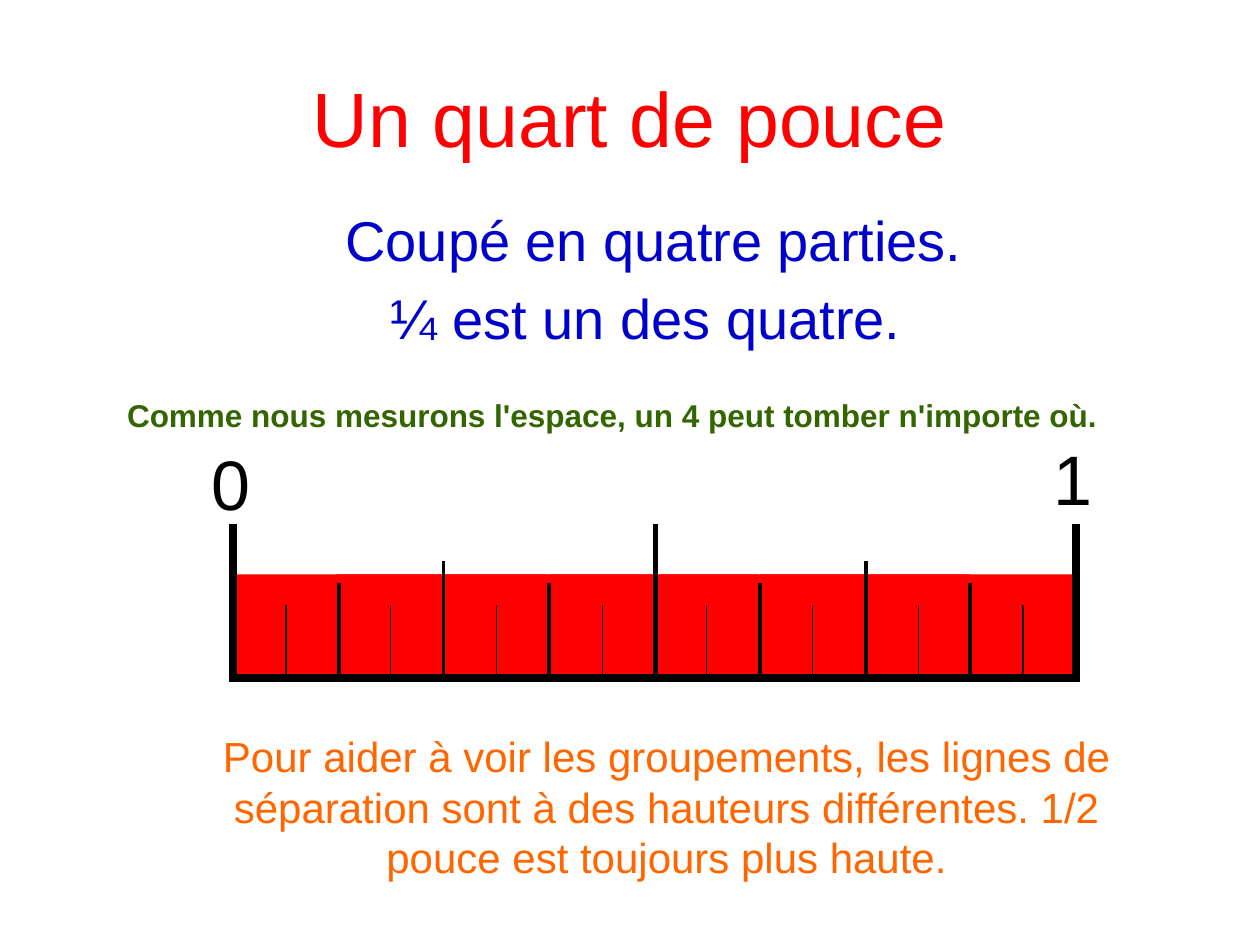
from lxml import etree
from pptx import Presentation, util as u
from pptx.dml.color import RGBColor
from pptx.enum import shapes, text
from pptx.oxml.ns import qn

PX = 9144  # 100 px to the inch
RED = RGBColor(0xFF, 0x00, 0x00)
BLUE = RGBColor(0x00, 0x00, 0xCC)
GREEN = RGBColor(0x33, 0x66, 0x00)
ORANGE = RGBColor(0xFF, 0x66, 0x00)
BLACK = RGBColor(0x00, 0x00, 0x00)
CENTER = text.PP_ALIGN.CENTER


def write(box, *lines, size, color, bold=False, align=None):
    """Fill a box or placeholder with one paragraph per line."""
    frame = box.text_frame
    frame.word_wrap = True
    for number, line in enumerate(lines):
        para = frame.add_paragraph() if number else frame.paragraphs[0]
        para.alignment = align
        span = para.add_run()
        span.text = line
        span.font.name = "Arial"
        span.font.size = u.Pt(size)
        span.font.bold = bold
        span.font.color.rgb = color


def draw_line(parent, x1, y1, x2, y2, width):
    line = parent.shapes.add_connector(
        shapes.MSO_CONNECTOR.STRAIGHT, x1 * PX, y1 * PX, x2 * PX, y2 * PX)
    line.line.color.rgb = BLACK
    line.line.width = u.Pt(width)
    etree.SubElement(line._element.spPr, qn("a:effectLst"))


deck = Presentation()
deck.slide_width, deck.slide_height = 1000 * PX, 750 * PX
page = deck.slides.add_slide(deck.slide_layouts[1])

# Title and the two centred lines
title, body = page.placeholders
for box, place in ((title, (50, 30, 900, 125)), (body, (50, 158, 950, 350))):
    box.left, box.top, box.width, box.height = [side * PX for side in place]
write(title, "Un quart de pouce", size=44, color=RED, align=CENTER)
write(body, "Coupé en quatre parties.", "¼ est un des quatre.",
      size=32, color=BLUE, align=CENTER)
for para, right in zip(body.text_frame.paragraphs, (12, 25)):
    properties = para._p.get_or_add_pPr()
    properties.set("marL", str(38 * PX))
    properties.set("marR", str(right * PX))
    properties.set("indent", str(-38 * PX))
    etree.SubElement(properties, qn("a:buNone"))

# Red band of the ruler, in overlapping quarters of an inch
for left in (603, 186, 523, 435, 267, 686, 353):
    quarter = page.shapes.add_shape(
        shapes.MSO_SHAPE.RECTANGLE, left * PX, 456 * PX, 167 * PX, 83 * PX)
    quarter.shadow.inherit = False
    quarter.fill.solid()
    quarter.fill.fore_color.rgb = RED
    quarter.line.fill.background()

# Ruler: the coarser the division, the taller and thicker its mark
START, END, BASE = 185, 854, 538
ruler = page.shapes.add_group_shape()
draw_line(ruler, START - 3, BASE, END + 3, BASE, 4.5)
marks = {16: (416, 4.5), 8: (416, 3), 4: (445, 2.25), 2: (463, 2.25), 1: (480, 0.75)}
for sixteenth in range(17):
    division = next(step for step in marks if sixteenth % step == 0)
    top, width = marks[division]
    x = round(START + (END - START) * sixteenth / 16)
    draw_line(ruler, x, top, x, BASE + 3 if division == 16 else BASE, width)

# Labels and remarks
for parent, label, place, style in (
    (ruler, "0", (158, 345, 100, 77), dict(size=40, color=BLACK)),
    (ruler, "1", (826, 341, 83, 77), dict(size=40, color=BLACK)),
    (page, "Pour aider à voir les groupements, les lignes de séparation sont à "
           "des hauteurs différentes. 1/2 pouce est toujours plus haute.",
     (133, 575, 792, 131), dict(size=24, color=ORANGE, align=CENTER)),
    (page, "Comme nous mesurons l'espace, un 4 peut tomber n'importe où.",
     (91, 309, 819, 40), dict(size=18, color=GREEN, bold=True)),
):
    box = parent.shapes.add_textbox(*[side * PX for side in place])
    write(box, label, **style)

deck.save("out.pptx")
